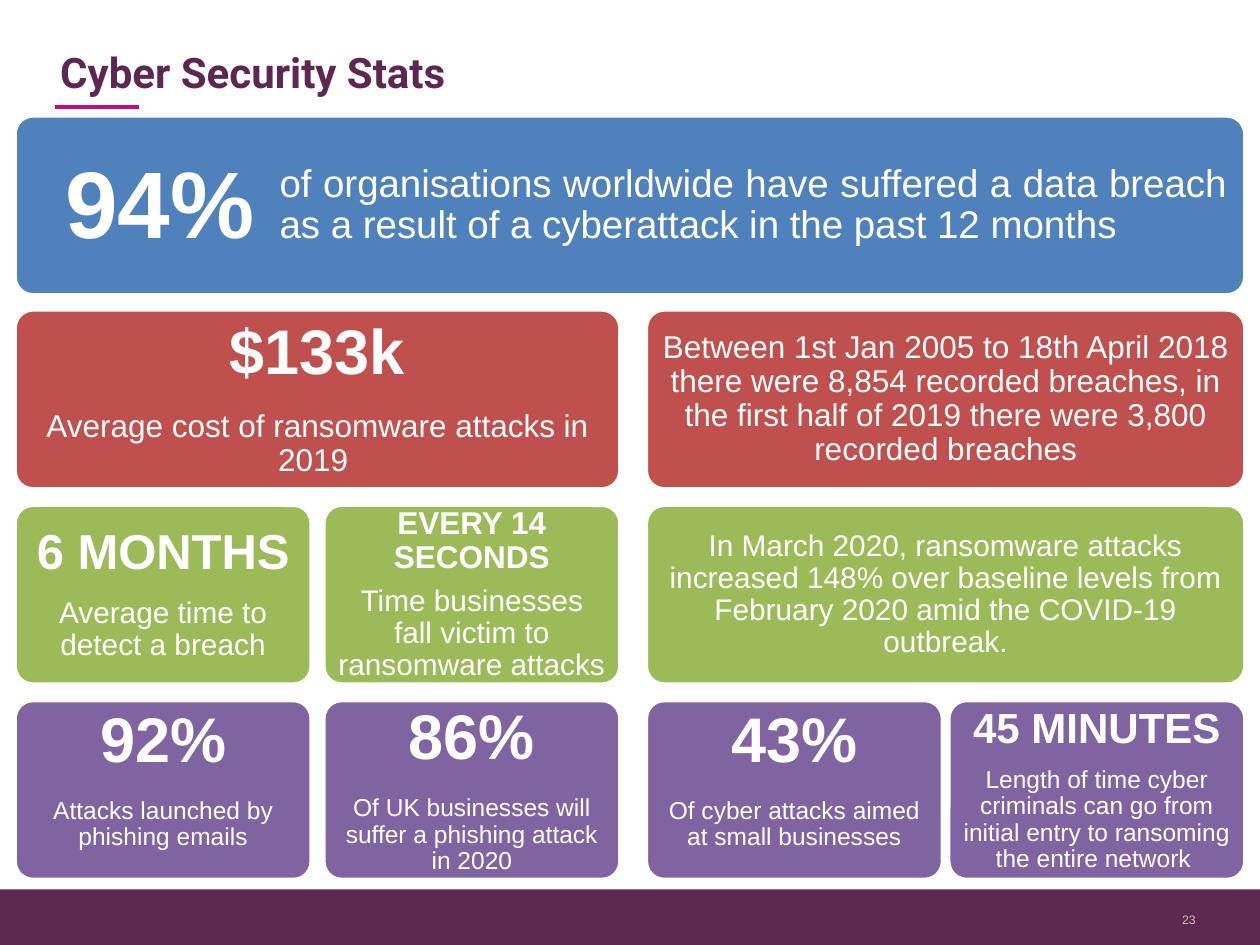
from dataclasses import dataclass

from lxml.etree import SubElement
from pptx import Presentation
from pptx.dml.color import RGBColor
from pptx.enum.shapes import MSO_CONNECTOR, MSO_SHAPE
from pptx.enum.text import MSO_ANCHOR, PP_ALIGN
from pptx.oxml.ns import qn
from pptx.util import Inches, Pt


@dataclass(frozen=True)
class Theme:
    plum: str = "5E2751"
    magenta: str = "BA0E82"
    white: str = "FFFFFF"
    grey: str = "C2C2C2"
    rows: tuple = ("4F81BD", "C0504D", "9BBB59", "8064A2")
    body_sizes: tuple = (22, 18, 17, 14)
    insets: tuple = (0.14, 0.12, 0.11, 0.10)
    body_font: str = "Arial"
    title_font: str = "Roboto"
    title_size: int = 24
    figure_size: int = 54
    number_size: int = 7


theme = Theme()


def add_run(para, text, size, color=theme.white, bold=False, font=theme.body_font):
    span = para.add_run()
    span.text = text
    span.font.name = font
    span.font.size = Pt(size)
    span.font.bold = bold
    span.font.color.rgb = RGBColor.from_string(color)


def add_text_box(left, top, width, height):
    """Add an empty wrapping text box and return its shape."""
    box = slide.shapes.add_textbox(Inches(left), Inches(top), Inches(width), Inches(height))
    box.text_frame.word_wrap = True
    return box


deck = Presentation()
deck.slide_width, deck.slide_height = Inches(10), Inches(7.5)
slide = deck.slides.add_slide(deck.slide_layouts[6])

# Footer band with the page number
footer = slide.shapes.add_shape(
    MSO_SHAPE.RECTANGLE, Inches(0), Inches(7.06), Inches(10), Inches(0.44))
footer.shadow.inherit = False
footer.fill.solid()
footer.fill.fore_color.rgb = RGBColor.from_string(theme.plum)
footer.line.fill.background()

number_frame = add_text_box(9.01, 7.17, 0.48, 0.25).text_frame
number_frame.margin_left = number_frame.margin_right = 0
number_frame.margin_top = number_frame.margin_bottom = 0
number_frame.vertical_anchor = MSO_ANCHOR.MIDDLE
number_para = number_frame.paragraphs[0]
number_para.alignment = PP_ALIGN.RIGHT
add_run(number_para, "23", theme.number_size, theme.grey)

# Title and its underline
underline = slide.shapes.add_connector(
    MSO_CONNECTOR.STRAIGHT, Inches(0.44), Inches(0.85), Inches(1.1), Inches(0.85))
underline.line.color.rgb = RGBColor.from_string(theme.magenta)
underline.line.width = Pt(2)
SubElement(underline.element.spPr, qn("a:effectLst"))

title = add_text_box(0.38, 0.32, 7.07, 0.5)
add_run(title.text_frame.paragraphs[0], "Cyber Security Stats",
        theme.title_size, theme.plum, True, theme.title_font)

# Statistic cards: row, first column, last column, headline, headline size, body
column_lefts = (0.12, 2.57, 5.13, 7.53)
column_width = 2.35
row_tops = (0.92, 2.46, 4.01, 5.56)
card_height = 1.42
corner = 0.1
corner_inset = 0.04  # a rounded rectangle already insets its text by this much
cards = [
    (0, 0, 3, None, None, "of organisations worldwide have suffered a data breach "
                          "as a result of a cyberattack in the past 12 months"),
    (1, 0, 1, "$133k", 36, "Average cost of ransomware attacks in 2019 "),
    (2, 0, 0, "6 MONTHS", 28, "Average time to detect a breach"),
    (3, 0, 0, "92%", 36, "Attacks launched by phishing emails"),
    (2, 1, 1, "EVERY 14 SECONDS", 18, "Time businesses fall victim to ransomware attacks"),
    (3, 1, 1, "86%", 36, "Of UK businesses will suffer a phishing attack in 2020"),
    (1, 2, 3, None, None, "Between 1st Jan 2005 to 18th April 2018 there were 8,854 recorded "
                          "breaches, in the first half of 2019 there were 3,800 recorded breaches"),
    (2, 2, 3, None, None, "In March 2020, ransomware attacks increased 148% over baseline levels "
                          "from February 2020 amid the COVID-19 outbreak."),
    (3, 2, 2, "43%", 36, "Of cyber attacks aimed at small businesses"),
    (3, 3, 3, "45 MINUTES", 24, "Length of time cyber criminals can go from initial entry "
                                "to ransoming the entire network "),
]
raised_headlines = ("92%", "43%")  # two-line cards lined up with their neighbours

for row, first, last, headline, headline_size, body in cards:
    left = column_lefts[first]
    width = column_lefts[last] + column_width - left
    card = slide.shapes.add_shape(
        MSO_SHAPE.ROUNDED_RECTANGLE, Inches(left), Inches(row_tops[row]),
        Inches(width), Inches(card_height))
    card.adjustments[0] = corner
    card.shadow.inherit = False
    card.fill.solid()
    card.fill.fore_color.rgb = RGBColor.from_string(theme.rows[row])
    card.line.color.rgb = RGBColor.from_string(theme.white)
    card.line.width = Pt(2)

    frame = card.text_frame
    frame.word_wrap = True
    frame.vertical_anchor = MSO_ANCHOR.MIDDLE
    inset = Inches(theme.insets[row] - corner_inset)
    frame.margin_left = frame.margin_right = inset
    frame.margin_top = frame.margin_bottom = inset
    if headline in raised_headlines:
        frame.margin_top, frame.margin_bottom = Inches(0.01), Inches(0.18)

    lines = [(body, theme.body_sizes[row], False)]
    if headline:
        lines.insert(0, (headline, headline_size, True))
    for index, (text, size, bold) in enumerate(lines):
        para = frame.add_paragraph() if index else frame.paragraphs[0]
        para.alignment = PP_ALIGN.CENTER
        para.line_spacing = 0.9
        para.space_after = Pt(round(size * 0.35, 1))
        add_run(para, text, size, bold=bold)
        if row == 0:
            para.alignment = PP_ALIGN.JUSTIFY
            para._p.get_or_add_pPr().set("marL", str(Inches(1.96)))

# Large figure on the top card
figure = add_text_box(0.42, 1.09, 2.12, 1.01)
add_run(figure.text_frame.paragraphs[0], "94%", theme.figure_size, bold=True)

deck.save("out.pptx")
